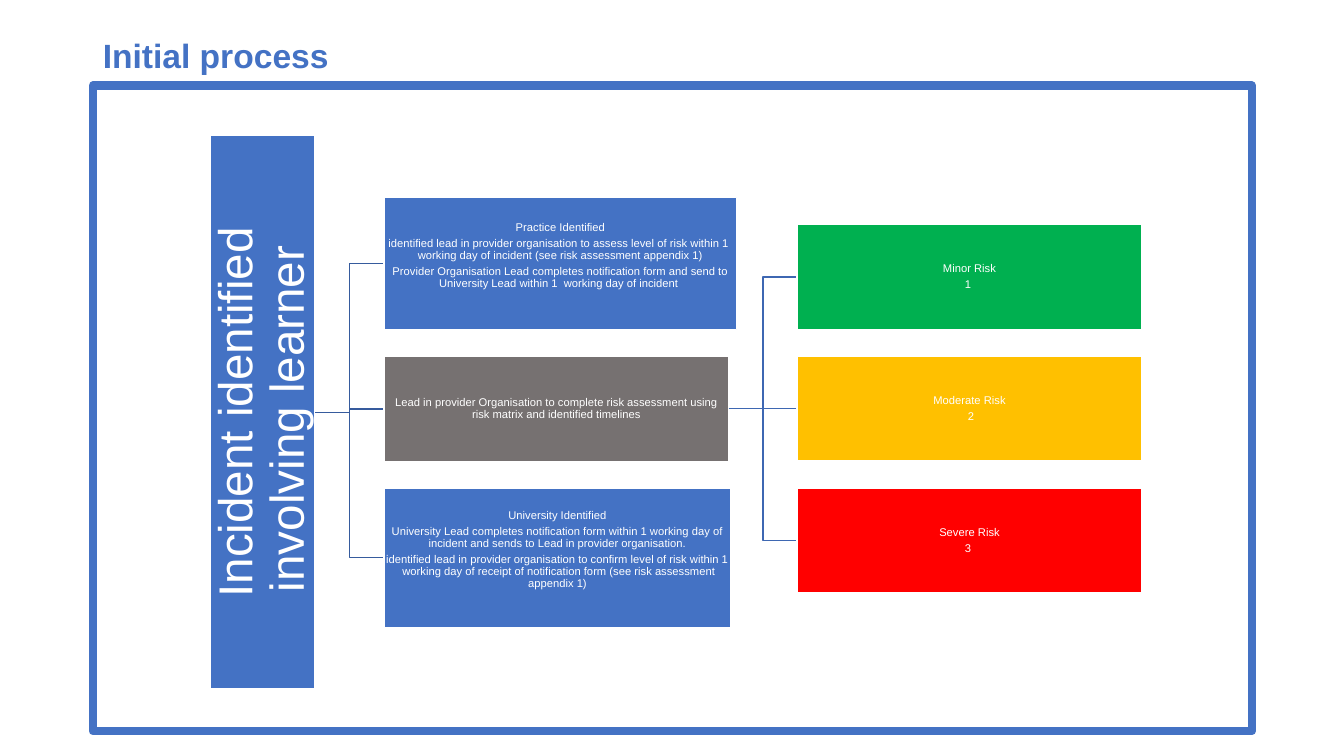
from lxml.etree import SubElement
from pptx import Presentation
from pptx.dml.color import RGBColor
from pptx.enum.shapes import MSO_CONNECTOR, MSO_SHAPE
from pptx.enum.text import MSO_ANCHOR, MSO_AUTO_SIZE, PP_ALIGN
from pptx.oxml.ns import qn
from pptx.util import Cm, Pt

HUES = {"blue": "4472C4", "grey": "767171", "green": "00B050", "amber": "FFC000",
        "red": "FF0000", "white": "FFFFFF", "stem": "365B9D", "fork": "3E67B2"}
STEPS = [
    ("blue", 0, 8.89, 3.33, 0.42, [
        "Practice Identified",
        "identified lead in provider organisation to assess level of risk within 1  working day of "
        "incident (see risk assessment appendix 1)",
        "Provider Organisation Lead completes notification form and send to University Lead "
        "within 1  working day of incident "]),
    ("grey", 4.01, 8.69, 2.64, 0.03, [
        "Lead in provider Organisation to complete risk assessment using risk matrix "
        "and identified timelines"]),
    ("blue", 7.32, 8.74, 3.51, 0.42, [
        "University Identified",
        "University Lead completes notification form within 1 working day of incident and sends "
        "to Lead in provider organisation.",
        "identified lead in provider organisation to confirm level of risk within 1  working day "
        "of receipt of notification form (see risk assessment appendix 1)"]),
]
RISKS = [("green", ["Minor Risk", "1 "]),
         ("amber", ["Moderate Risk", " 2"]),
         ("red", ["Severe Risk", "3 "])]


def hue(name):
    """Return the named colour."""
    return RGBColor.from_string(HUES[name])


def style(item, form):
    """Set each attribute in the format dict on the item."""
    for key, value in form.items():
        setattr(item, key, value)


def write(frame, lines, size, tint, pad, foot, **form):
    """Fill a text frame with paragraphs of one look."""
    style(frame, {"word_wrap": True, "auto_size": MSO_AUTO_SIZE.NONE,
                  "vertical_anchor": MSO_ANCHOR.MIDDLE,
                  "margin_left": Cm(pad), "margin_right": Cm(pad),
                  "margin_top": Cm(pad), "margin_bottom": Cm(foot)})
    for rank, line in enumerate(lines):
        para = frame.add_paragraph() if rank else frame.paragraphs[0]
        style(para, {"text": line, "line_spacing": 0.9, **form})
        font = para.runs[0].font
        style(font, {"name": "Arial", "size": Pt(size)})
        font.color.rgb = hue(tint)


def block(slide, box, fill, edge, width):
    """Draw a rectangle, left hollow when fill is None."""
    shape = slide.shapes.add_shape(MSO_SHAPE.RECTANGLE, *map(Cm, box))
    shape.shadow.inherit = False
    if fill:
        shape.fill.solid()
        shape.fill.fore_color.rgb = hue(fill)
    else:
        shape.fill.background()
    shape.line.color.rgb = hue(edge)
    shape.line.width = Pt(width)
    return shape


def card(slide, box, fill, lines, size=8, pad=0.03, foot=0.03):
    """Draw a filled box with centred white text."""
    shape = block(slide, box, fill, "white", 1)
    write(shape.text_frame, lines, size, "white", pad, foot,
          alignment=PP_ALIGN.CENTER, space_after=Pt(size * 0.35))
    return shape


def links(slide, start, right, ends, tint):
    """Join one start point to several heights on the right."""
    left, top = start
    for end in ends:
        kind = MSO_CONNECTOR.STRAIGHT if end == top else MSO_CONNECTOR.ELBOW
        line = slide.shapes.add_connector(kind, *map(Cm, (left, top, right, end)))
        line.line.color.rgb = hue(tint)
        line.line.width = Pt(1)
        SubElement(line._element.spPr, qn("a:effectLst"))


def head(slide, box):
    """Place and format the title."""
    title = slide.shapes.title
    style(title, dict(zip(("left", "top", "width", "height"), map(Cm, box))))
    write(title.text_frame, ["Initial process"], 24, "blue", 0.25, 0.13,
          alignment=PP_ALIGN.LEFT)
    title.text_frame.paragraphs[0].runs[0].font.bold = True


def trunk(slide, box):
    """Draw the upright bar that starts the process."""
    left, top, width, height = box
    shift = (height - width) / 2
    bar = card(slide, (left - shift, top + shift, height, width), "blue",
               ["Incident identified involving learner "], 34, 0.05, 0.05)
    bar.rotation = 270


def steps(slide, box, start):
    """Draw the middle column and its links from the bar."""
    left, top = box
    links(slide, start, left, [top + drop + tall / 2 for _, drop, _, tall, _, _ in STEPS], "stem")
    for fill, drop, wide, tall, foot, lines in STEPS:
        card(slide, (left, top + drop, wide, tall), fill, lines, foot=foot)


def risks(slide, box, start):
    """Draw the evenly spaced risk levels and their links."""
    left, top, width, height = box
    tall = 2.64
    pitch = (height - tall) / (len(RISKS) - 1)
    tops = [top + rank * pitch for rank in range(len(RISKS))]
    links(slide, (start, tops[1] + tall / 2), left, [y + tall / 2 for y in tops], "fork")
    for (fill, lines), y in zip(RISKS, tops):
        card(slide, (left, y, width, tall), fill, lines)


def chart(slide, box):
    """Draw the framed process inside its box."""
    left, top, _, _ = box
    trunk(slide, (left + 2.96, top + 1.26, 2.64, 13.94))
    steps(slide, (left + 7.34, top + 2.82), (left + 5.6, top + 8.23))
    risks(slide, (left + 17.75, top + 3.5, 8.69, 9.28), left + 16.03)
    block(slide, box, None, "blue", 6)


def main():
    """Build and save the slide."""
    deck = Presentation()
    style(deck, {"slide_width": Cm(33.87), "slide_height": Cm(19.05)})
    slide = deck.slides.add_slide(deck.slide_layouts[5])
    head(slide, (2.34, 0.64, 29.21, 1.52))
    chart(slide, (2.34, 2.16, 29.21, 16.26))
    deck.save("out.pptx")


if __name__ == "__main__":
    main()
